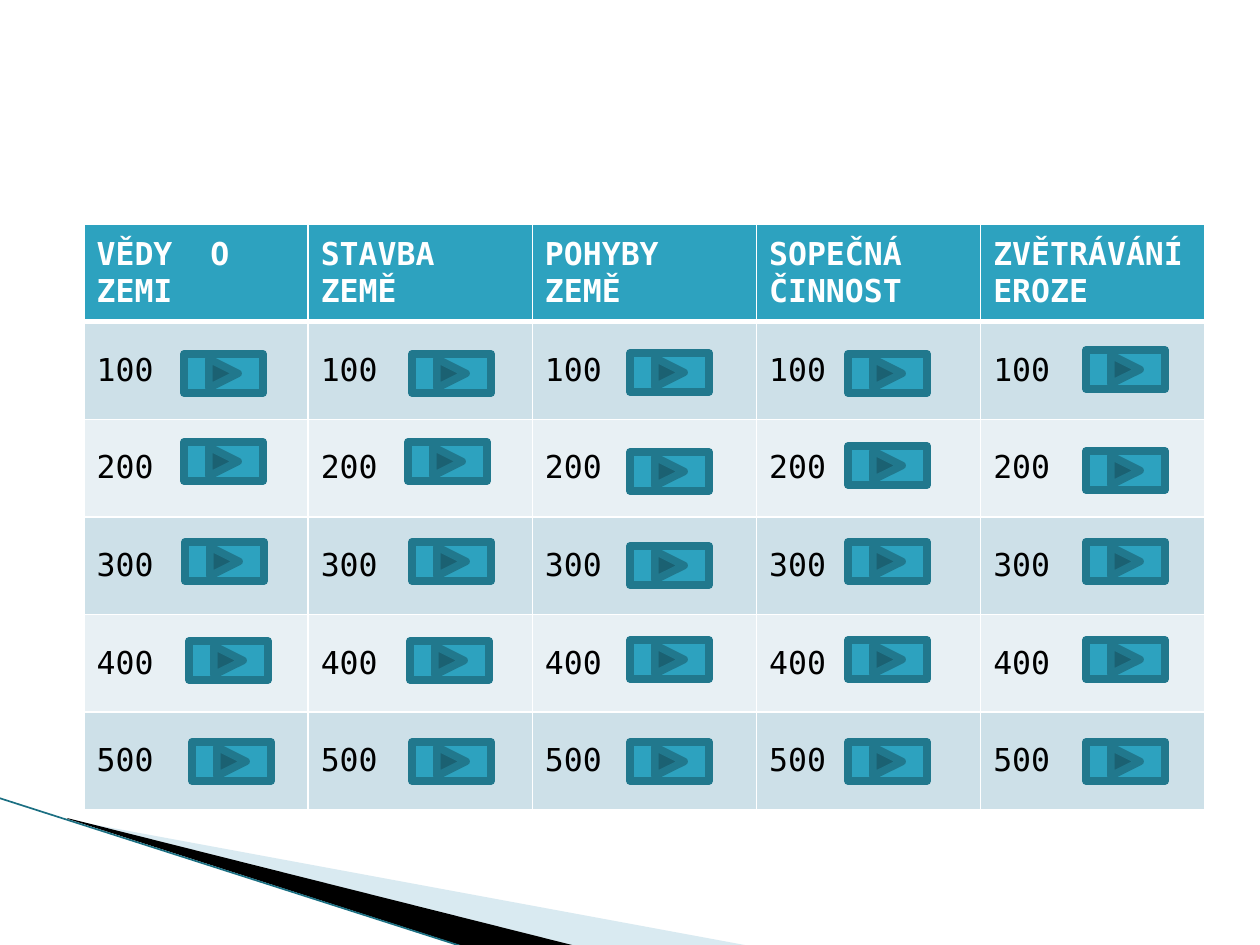
from lxml import etree
from pptx import Presentation
from pptx import util as u
from pptx.dml.color import RGBColor
from pptx.enum import shapes, text
from pptx.oxml.ns import qn

SCALE = 914400 / 126
FONT = "DejaVu Sans Mono"
WHITE, BLACK, TEAL, DARK_TEAL = "FFFFFF", "000000", "2DA2BF", "21788D"
BANDS = ("CDE0E8", "E8F0F4")
TOPICS = ("VĚDY  O\nZEMI", "STAVBA\nZEMĚ", "POHYBY\nZEMĚ",
          "SOPEČNÁ\nČINNOST", "ZVĚTRÁVÁNÍ\nEROZE")
POINTS = ("100", "200", "300", "400", "500")
BUTTON_LEFTS = (
    (184, 184, 185, 189, 192),
    (412, 408, 412, 410, 412),
    (630,) * 5,
    (848,) * 5,
    (1086,) * 5,
)
BUTTON_TOPS = (
    (354, 442, 542, 641, 742),
    (354, 442, 542, 641, 742),
    (353, 452, 546, 640, 742),
    (354, 446, 542, 640, 742),
    (350, 451, 542, 640, 742),
)


def px(length):
    return u.Emu(round(length * SCALE))


def color(value):
    return RGBColor.from_string(value)


def paint(fill, value):
    fill.solid()
    fill.fore_color.rgb = color(value)


def add_wedge(slide, points, value, opacity=100):
    builder = slide.shapes.build_freeform(*points[0], scale=SCALE)
    builder.add_line_segments(points[1:], close=True)
    wedge = builder.convert_to_shape()
    wedge.shadow.inherit = False
    paint(wedge.fill, value)
    wedge.line.fill.background()
    if opacity < 100:
        tint = wedge.fill._xPr.find(f".//{qn('a:srgbClr')}")
        etree.SubElement(tint, qn("a:alpha"), val=str(opacity * 1000))


def add_edge(slide, start, end, value):
    edge = slide.shapes.add_connector(
        shapes.MSO_CONNECTOR.STRAIGHT, *map(px, start + end))
    edge.line.color.rgb = color(value)
    edge.line.width = u.Pt(0.95)
    etree.SubElement(edge._element.spPr, qn("a:effectLst"))


def set_borders(cell, top, bottom):
    props = cell._tc.get_or_add_tcPr()
    for side, width in (("L", 1), ("R", 1), ("T", top), ("B", bottom)):
        border = etree.SubElement(props, qn(f"a:ln{side}"), w=str(u.Pt(width)))
        fill = etree.SubElement(border, qn("a:solidFill"))
        etree.SubElement(fill, qn("a:srgbClr"), val=WHITE)


def fill_cell(cell, content, row):
    header = row == 0
    set_borders(cell, 3 if row == 1 else 1, 3 if header else 1)
    paint(cell.fill, TEAL if header else BANDS[(row - 1) % 2])
    cell.vertical_anchor = text.MSO_ANCHOR.MIDDLE
    cell.text = content
    for paragraph in cell.text_frame.paragraphs:
        paragraph.font.name = FONT
        paragraph.font.size = u.Pt(18)
        paragraph.font.bold = header
        paragraph.font.color.rgb = color(WHITE if header else BLACK)


def add_board(slide, left, top, width, height):
    rows = [TOPICS] + [(points,) * len(TOPICS) for points in POINTS]
    board = slide.shapes.add_table(
        len(rows), len(TOPICS), px(left), px(top), px(width), px(height)).table
    for row, contents in enumerate(rows):
        for column, content in enumerate(contents):
            fill_cell(board.cell(row, column), content, row)


def add_button(slide, left, top):
    button = slide.shapes.add_shape(
        shapes.MSO_SHAPE.ACTION_BUTTON_FORWARD_OR_NEXT,
        px(left), px(top), px(79), px(39))
    button.shadow.inherit = False
    paint(button.fill, TEAL)
    button.line.color.rgb = color(DARK_TEAL)
    button.line.width = u.Pt(4.33)


def main():
    deck = Presentation()
    deck.slide_width, deck.slide_height = px(1260), px(945)
    slide = deck.slides.add_slide(deck.slide_layouts[6])
    add_wedge(slide, [(69, 820), (750, 946), (575, 946), (69, 819)], "A0CBDC", 40)
    add_wedge(slide, [(67, 818), (576, 946), (469, 948), (68, 819)], BLACK)
    add_edge(slide, (-1, 798), (467, 948), "1B6F82")
    add_board(slide, 84, 224, 1121, 586)
    for lefts, tops in zip(BUTTON_LEFTS, BUTTON_TOPS):
        for left, top in zip(lefts, tops):
            add_button(slide, left, top)
    deck.save("out.pptx")


if __name__ == "__main__":
    main()
